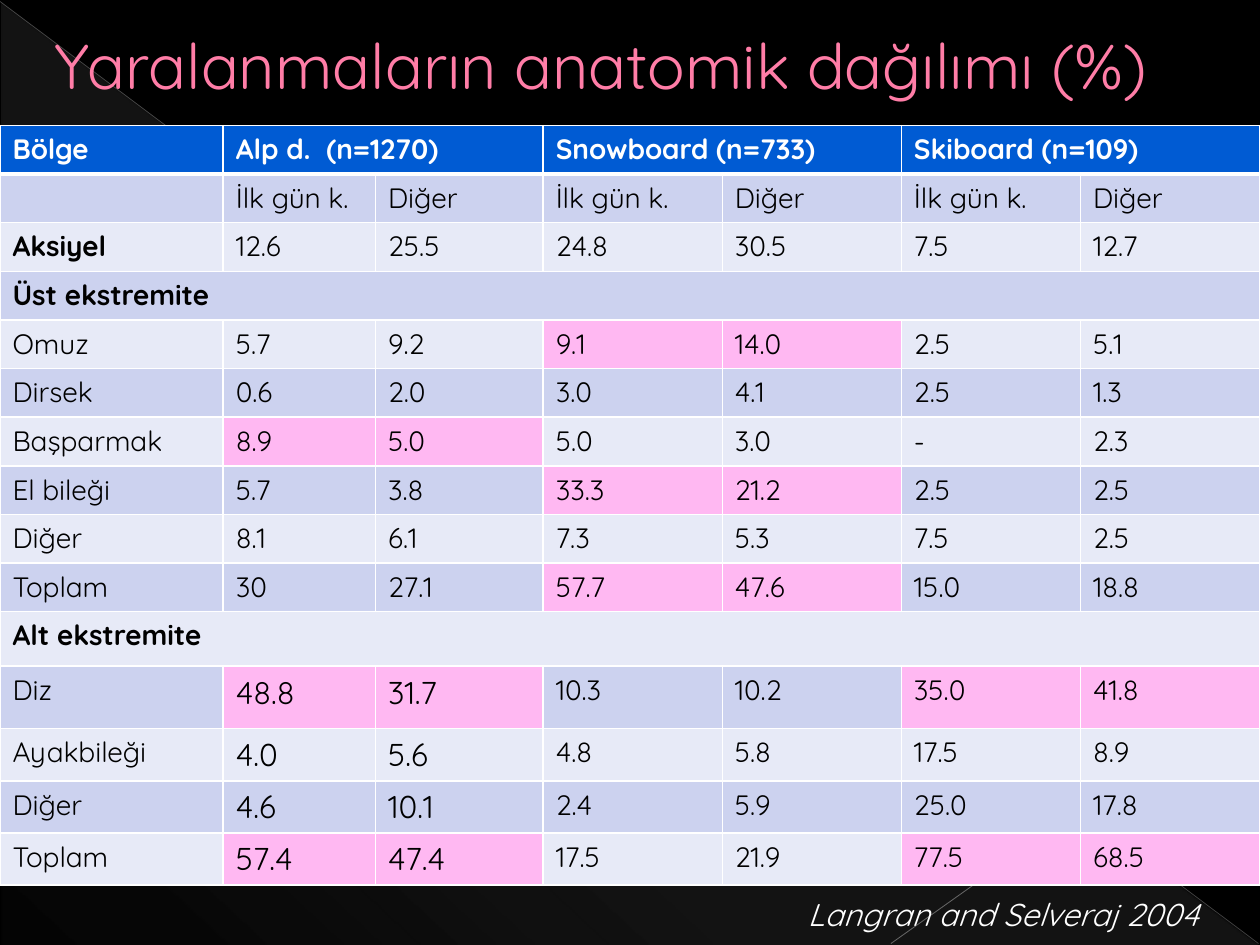
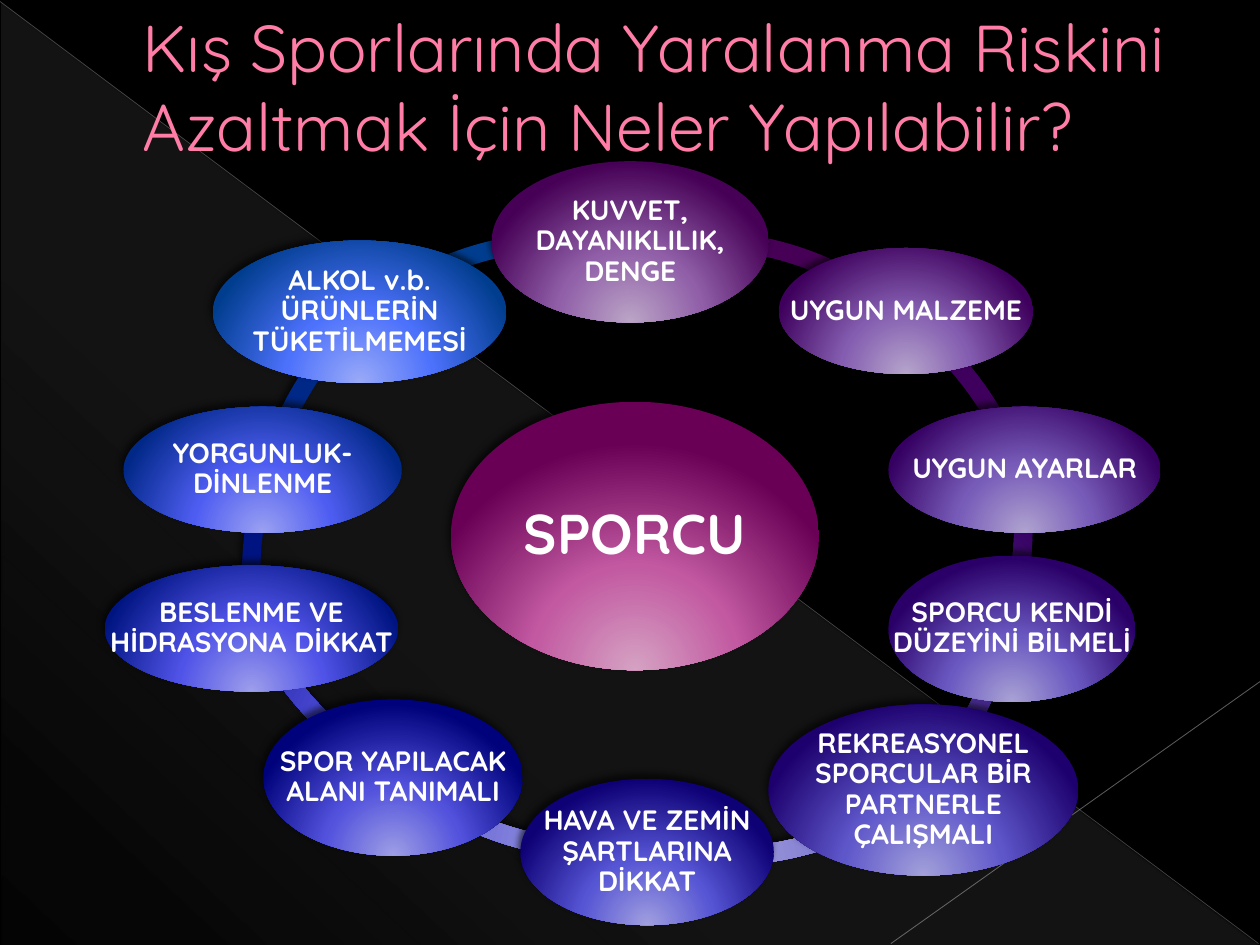
from lxml.etree import SubElement
from pptx import Presentation
from pptx.dml.color import RGBColor
from pptx.enum.shapes import MSO_CONNECTOR, MSO_SHAPE
from pptx.enum.text import MSO_ANCHOR, PP_ALIGN
from pptx.oxml import parse_xml
from pptx.oxml.ns import nsdecls, qn
from pptx.util import Cm, Pt

FONT = "Quicksand"
BLACK, WHITE = "000000", "FFFFFF"
PINK, PINK_EDGE = "FF7DA7", "B12761"
HEADER_BLUE, HIGHLIGHT = "005BD3", "FFB8F2"
BANDS = ["E7EAF7", "CCD2EF"]

COLUMN_WIDTHS = [4.5, 3.07, 3.38] + [3.61] * 4
ROW_HEIGHT = 0.98
TALL_ROWS = {10: 1.1, 11: 1.26, 12: 1.05, 13: 1.05, 14: 1.05}
INJURIES = [
    ["Bölge", "Alp d.  (n=1270)", "", "Snowboard (n=733)", "", "Skiboard (n=109)", ""],
    [""] + ["İlk gün k.", "Diğer"] * 3,
    ["Aksiyel", "12.6", "25.5", "24.8", "30.5", "7.5", "12.7"],
    ["Üst ekstremite"],
    ["Omuz", "5.7", "9.2", "9.1", "14.0", "2.5", "5.1"],
    ["Dirsek", "0.6", "2.0", "3.0", "4.1", "2.5", "1.3"],
    ["Başparmak", "8.9", "5.0", "5.0", "3.0", "-", "2.3"],
    ["El bileği", "5.7", "3.8", "33.3", "21.2", "2.5", "2.5"],
    ["Diğer", "8.1", "6.1", "7.3", "5.3", "7.5", "2.5"],
    ["Toplam", "30", "27.1", "57.7", "47.6", "15.0", "18.8"],
    ["Alt ekstremite"],
    ["Diz", "48.8", "31.7", "10.3", "10.2", "35.0", "41.8"],
    ["Ayakbileği", "4.0", "5.6", "4.8", "5.8", "17.5", "8.9"],
    ["Diğer", "4.6", "10.1", "2.4", "5.9", "25.0", "17.8"],
    ["Toplam", "57.4", "47.4", "17.5", "21.9", "77.5", "68.5"],
]
BOLD_LABELS = {"Aksiyel", "Üst ekstremite", "Alt ekstremite"}
HIGHLIGHTED_PAIRS = {(4, 3), (6, 1), (7, 3), (9, 3), (11, 1), (11, 5), (14, 1), (14, 5)}

ARC_SIZE = 13.23
ARC_THICKNESS = 0.028
LONG_MEASURE = 40
SPORCU_BOX = (9.09, 8.1, 7.42, 5.41)
SPORCU_COLOURS = ("D5A2C3", "C259A1", "690055")
MEASURES = [
    ("KUVVET, DAYANIKLILIK, DENGE", (9.91, 3.25, 5.59, 3.25),
     ("BBA5C6", "905FA8", "460055"), (7.44, 4.65), (258.04, 310.21)),
    ("UYGUN MALZEME", (15.7, 5, 5.13, 2.54),
     ("B5A4CB", "845DB0", "3E005C"), (7.85, 4.98), (305.52, 341.13)),
    ("UYGUN AYARLAR", (17.91, 8.2, 5.49, 2.54),
     ("AFA3CF", "775BB8", "350062"), (7.59, 3.94), (350.42, 18.9)),
    ("SPORCU KENDİ DÜZEYİNİ BİLMELİ", (17.91, 11.2, 4.98, 2.95),
     ("A9A2D4", "6A59C1", "2A0068"), (7.39, 4.7), (11.96, 44.99)),
    ("REKREASYONEL SPORCULAR BİR PARTNERLE ÇALIŞMALI", (15.49, 14.2, 6.25, 3.45),
     ("A3A0DA", "5E57CA", "1D006E"), (7.95, 4.22), (51.54, 103.35)),
    ("HAVA VE ZEMİN ŞARTLARINA DİKKAT", (10.49, 15.7, 5.11, 2.95),
     ("A09FDF", "5655D4", "0E0075"), (5.54, 4.09), (82.03, 130.5)),
    ("SPOR YAPILACAK ALANI TANIMALI", (5.31, 14.1, 5.23, 3.15),
     ("9E9EE5", "5252DD", "00027B"), (4.37, 3.3), (118, 154.96)),
    ("BESLENME VE HİDRASYONA DİKKAT", (2.11, 11.4, 5.92, 2.54),
     ("9D9EEB", "5053E7", "001481"), (4.88, 4.93), (170.11, 198.59)),
    ("YORGUNLUK-DİNLENME", (2.49, 8.2, 5.61, 2.54),
     ("9BA1F1", "4E5DF1", "002887"), (5, 4.52), (194.77, 228.18)),
    ("ALKOL v.b. ÜRÜNLERİN TÜKETİLMEMESİ", (4.29, 4.85, 5.92, 2.87),
     ("9AAAF8", "4C71FB", "003D8E"), (4.83, 4.67), (230.08, 281.03)),
]


def rgb(colour):
    return RGBColor.from_string(colour)


def lengths(box):
    return [Cm(length) for length in box]


class Deck:
    def __init__(self):
        self.presentation = Presentation()
        self.presentation.slide_width = Cm(25.4)
        self.presentation.slide_height = Cm(19.05)
        self.slide = None

    def new_slide(self):
        self.slide = self.presentation.slides.add_slide(self.presentation.slide_layouts[6])
        self.slide.background.fill.solid()
        self.slide.background.fill.fore_color.rgb = rgb(BLACK)
        veil = self.shape(MSO_SHAPE.RIGHT_TRIANGLE, (0.03, 0.05, 25.35, 19))
        stops = [(0, "D2D2D2", 10), (70, "D2D2D2", 8), (100, "D2D2D2", 1)]
        self.gradient(veil, stops, '<a:lin ang="7980000" scaled="0"/>')
        self.line((0, 0.03, 25.37, 19.02), "BFBFBF", 0.39, 35)
        self.line((25.4, 13.74, 17.96, 19.02), "C6C6C6", 0.47, 45)

    def shape(self, preset, box):
        shape = self.slide.shapes.add_shape(preset, *lengths(box))
        shape.shadow.inherit = False
        shape.fill.background()
        shape.line.fill.background()
        return shape

    def gradient(self, shape, stops, direction):
        stop_xml = "".join(
            f'<a:gs pos="{position * 1000}"><a:srgbClr val="{colour}">'
            f'<a:alpha val="{opacity * 1000}"/></a:srgbClr></a:gs>'
            for position, colour, opacity in stops)
        fill = parse_xml(f'<a:gradFill {nsdecls("a")} rotWithShape="1">'
                         f"<a:gsLst>{stop_xml}</a:gsLst>{direction}</a:gradFill>")
        properties = shape._element.spPr
        properties.replace(properties.find(qn("a:noFill")), fill)

    def glossy(self, preset, box, colours):
        shape = self.shape(preset, box)
        stops = [(position, colour, 100) for position, colour in zip((0, 46, 100), colours)]
        self.gradient(shape, stops, '<a:path path="circle"><a:fillToRect l="50000" '
                                    't="155000" r="50000" b="-55000"/></a:path>')
        effects = shape._element.spPr.find(qn("a:effectLst"))
        effects.append(parse_xml(
            f'<a:outerShdw {nsdecls("a")} blurRad="50800" dist="38100" dir="14700000" '
            'rotWithShape="0"><a:srgbClr val="000000"><a:alpha val="60000"/>'
            "</a:srgbClr></a:outerShdw>"))
        return shape

    def line(self, ends, colour, width, opacity):
        line = self.slide.shapes.add_connector(MSO_CONNECTOR.STRAIGHT, *lengths(ends))
        line.line.color.rgb = rgb(colour)
        line.line.width = Pt(width)
        properties = line._element.spPr
        tint = next(properties.iter(qn("a:srgbClr")))
        SubElement(tint, qn("a:alpha"), val=str(opacity * 1000))
        SubElement(properties, qn("a:effectLst"))

    def style(self, paragraph, size, colour, bold=False, italic=False):
        for run in paragraph.runs:
            font = run.font
            font.name, font.size, font.bold, font.italic = FONT, Pt(size), bold, italic
            font.color.rgb = rgb(colour)
        if not paragraph.runs:
            SubElement(paragraph._p, qn("a:endParaRPr"), sz=str(size * 100))

    def text(self, words, box, size, colour=WHITE, anchor=MSO_ANCHOR.TOP, **emphasis):
        frame = self.slide.shapes.add_textbox(*lengths(box)).text_frame
        frame.word_wrap = True
        frame.vertical_anchor = anchor
        frame.text = words
        self.style(frame.paragraphs[0], size, colour, **emphasis)
        return frame

    def title(self, words, box, size):
        heading = self.text(words, box, size, PINK, MSO_ANCHOR.MIDDLE).paragraphs[0]
        heading._p.get_or_add_pPr().set("marL", str(Cm(1.35)))
        heading.runs[0].font._element.insert(0, parse_xml(
            f'<a:ln {nsdecls("a")} w="6350"><a:solidFill><a:srgbClr val="{PINK_EDGE}"/>'
            "</a:solidFill></a:ln>"))

    def oval(self, words, box, colours, size, inset):
        self.glossy(MSO_SHAPE.OVAL, box, colours)
        frame = self.text(words, box, size, anchor=MSO_ANCHOR.MIDDLE, bold=True)
        frame.margin_left = frame.margin_right = Cm(inset)
        frame.margin_top = frame.margin_bottom = Cm(0.05)
        frame.paragraphs[0].alignment = PP_ALIGN.CENTER
        frame.paragraphs[0].line_spacing = 0.9

    def arc(self, corner, angles, colours):
        arc = self.glossy(MSO_SHAPE.BLOCK_ARC, (*corner, ARC_SIZE, ARC_SIZE), colours)
        for index, degrees in enumerate(angles):
            arc.adjustments[index] = degrees * 0.6
        arc.adjustments[2] = ARC_THICKNESS

    def cell(self, cell, words, fill, size, colour, bold, top, bottom):
        cell.text = words
        self.style(cell.text_frame.paragraphs[0], size, colour, bold)
        properties = cell._tc.get_or_add_tcPr()
        for side, width in (("L", 1), ("R", 1), ("T", top), ("B", bottom)):
            properties.append(parse_xml(
                f'<a:ln{side} {nsdecls("a")} w="{Pt(width)}"><a:solidFill>'
                f'<a:srgbClr val="{WHITE}"/></a:solidFill></a:ln{side}>'))
        cell.fill.solid()
        cell.fill.fore_color.rgb = rgb(fill)

    def injury_table(self):
        table = self.slide.shapes.add_table(
            len(INJURIES), len(COLUMN_WIDTHS), *lengths((0, 2.53, 25.4, 15.24))).table
        for column, width in zip(table.columns, COLUMN_WIDTHS):
            column.width = Cm(width)
        for r, entries in enumerate(INJURIES):
            table.rows[r].height = Cm(TALL_ROWS.get(r, ROW_HEIGHT))
            header = r == 0
            for c in range(len(COLUMN_WIDTHS)):
                words = entries[c] if c < len(entries) else ""
                pair_start = c - (c - 1) % 2
                fill = HEADER_BLUE if header else BANDS[r % 2]
                if c and (r, pair_start) in HIGHLIGHTED_PAIRS:
                    fill = HIGHLIGHT
                self.cell(table.cell(r, c), words, fill,
                          size=18 if r > 10 and c in (1, 2) else 16,
                          colour=WHITE if header else BLACK,
                          bold=header or words in BOLD_LABELS,
                          top=3 if r == 1 else 1, bottom=3 if header else 1)
            if len(entries) == 1:
                table.cell(r, 0).merge(table.cell(r, len(COLUMN_WIDTHS) - 1))
        for c in (1, 3, 5):
            table.cell(0, c).merge(table.cell(0, c + 1))


def main():
    deck = Deck()

    deck.new_slide()
    deck.title("Yaralanmaların anatomik dağılımı (%)", (-0.51, 0, 25.91, 2.59), 36)
    deck.injury_table()
    deck.text("Langran and Selveraj 2004", (16.03, 17.91, 10, 1.02), 18, italic=True)

    deck.new_slide()
    deck.title("Kış Sporlarında Yaralanma Riskini Azaltmak İçin Neler Yapılabilir?",
               (1.27, 0.74, 22.86, 1.98), 37.8)
    for _, _, colours, corner, angles in reversed(MEASURES):
        deck.arc(corner, angles, colours)
    deck.oval("SPORCU", SPORCU_BOX, SPORCU_COLOURS, 32, 0.1)
    for words, box, colours, _, _ in MEASURES:
        deck.oval(words, box, colours, 16, 0.5 if len(words) > LONG_MEASURE else 0.05)

    deck.presentation.save("out.pptx")


if __name__ == "__main__":
    main()
